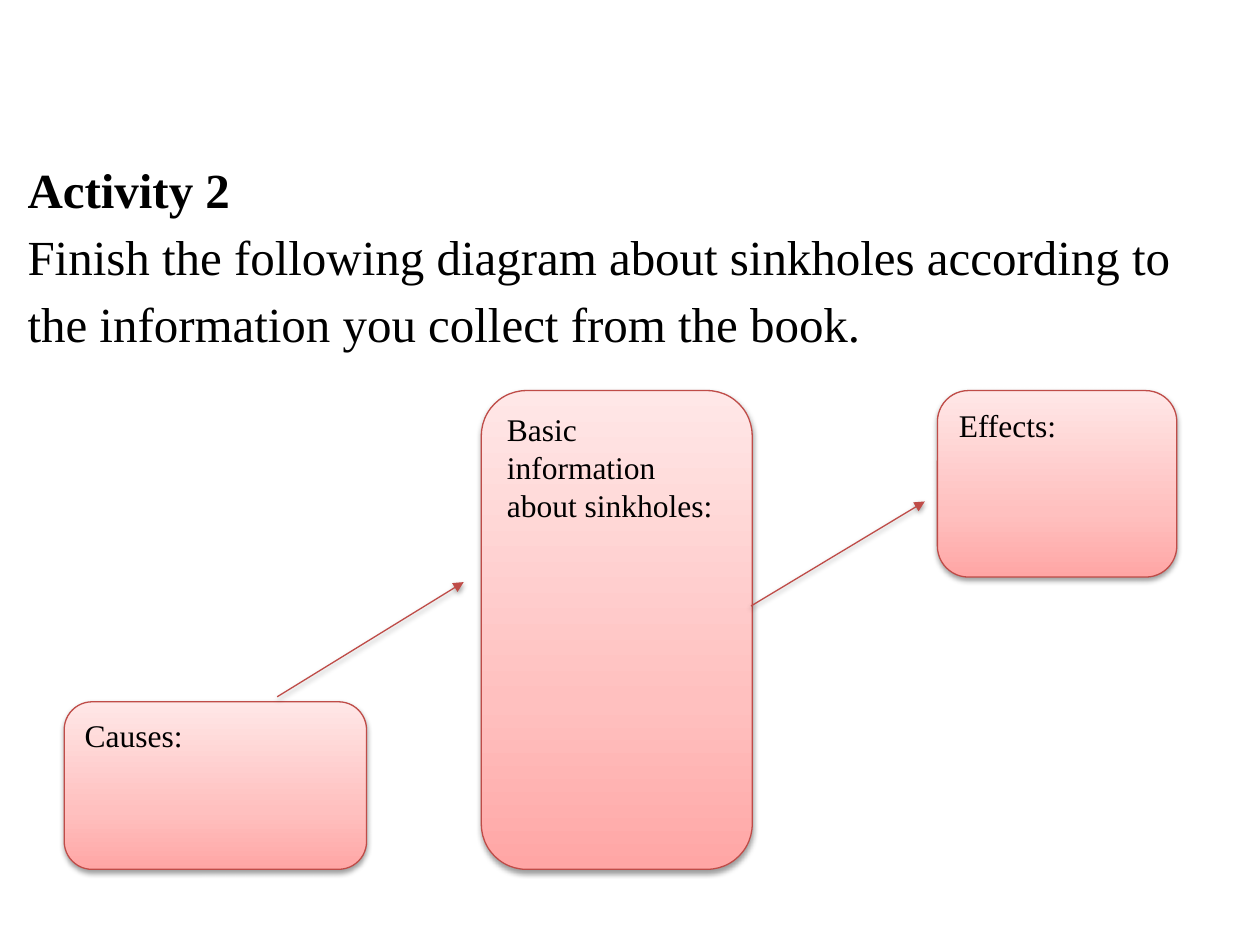
import dataclasses

import lxml.etree
import pptx
import pptx.dml.color
import pptx.enum.shapes
import pptx.enum.text
import pptx.oxml
import pptx.oxml.ns
import pptx.util

Inches = pptx.util.Inches
Pt = pptx.util.Pt
qn = pptx.oxml.ns.qn

FONT = "Times New Roman"
BLACK = "000000"
EDGE = "BF4C48"
STOPS = [(0, "FFA6A5"), (0.35, "FFC0BF"), (1, "FFE7E7")]
TOP, BASE = 3.1, 6.9

SHADOW = (
    f'<a:effectLst {pptx.oxml.ns.nsdecls("a")}>'
    '<a:outerShdw blurRad="39370" dist="20320" dir="5400000" rotWithShape="0">'
    '<a:srgbClr val="000000"><a:alpha val="38000"/></a:srgbClr>'
    "</a:outerShdw></a:effectLst>"
)


@dataclasses.dataclass
class Box:
    text: str
    left: float
    top: float
    width: float
    height: float


@dataclasses.dataclass
class Arrow:
    start: tuple[float, float]
    end: tuple[float, float]


BOXES = [
    Box("Basic information about sinkholes:", 3.82, TOP, 2.15, BASE - TOP),
    Box("Causes:", 0.51, 5.57, 2.4, BASE - 5.57),
    Box("Effects:", 7.44, TOP, 1.9, 1.48),
]
ARROWS = [
    Arrow((5.96, 4.81), (7.34, 3.98)),
    Arrow((2.2, 5.53), (3.68, 4.62)),
]


def color(code: str) -> pptx.dml.color.RGBColor:
    return pptx.dml.color.RGBColor.from_string(code)


def style(para, size: int, bold: bool = False) -> None:
    para.alignment = pptx.enum.text.PP_ALIGN.LEFT
    para.font.name = FONT
    para.font.size = Pt(size)
    para.font.bold = bold
    para.font.color.rgb = color(BLACK)


def outline(item) -> None:
    """Give a box or an arrow its red line and soft shadow."""
    item.line.color.rgb = color(EDGE)
    item.line.width = Pt(0.75)
    item._element.spPr.append(pptx.oxml.parse_xml(SHADOW))


def shade(shape) -> None:
    fill = shape.fill
    fill.gradient()
    fill.gradient_angle = 90
    # The default gradient has two stops; this one needs a third
    stops = shape._element.spPr.find(".//" + qn("a:gsLst"))
    extra = lxml.etree.SubElement(stops, qn("a:gs"), pos="0")
    lxml.etree.SubElement(extra, qn("a:srgbClr"), val=BLACK)
    for stop, (place, code) in zip(fill.gradient_stops, STOPS):
        stop.position = place
        stop.color.rgb = color(code)


def draw_box(slide, box: Box) -> None:
    shape = slide.shapes.add_shape(
        pptx.enum.shapes.MSO_SHAPE.ROUNDED_RECTANGLE,
        Inches(box.left), Inches(box.top), Inches(box.width), Inches(box.height),
    )
    shade(shape)
    outline(shape)
    frame = shape.text_frame
    frame.word_wrap = True
    frame.vertical_anchor = pptx.enum.text.MSO_ANCHOR.TOP
    frame.text = box.text
    style(frame.paragraphs[0], 18)


def draw_arrow(slide, arrow: Arrow) -> None:
    line = slide.shapes.add_connector(
        pptx.enum.shapes.MSO_CONNECTOR.STRAIGHT,
        *(Inches(value) for value in arrow.start + arrow.end),
    )
    outline(line)
    edge = line._element.spPr.find(qn("a:ln"))
    lxml.etree.SubElement(edge, qn("a:tailEnd"), type="triangle")


def draw_task(slide) -> None:
    area = slide.shapes.add_textbox(
        Inches(0.12), Inches(1.15), Inches(9.45), Inches(1.67)
    )
    frame = area.text_frame
    frame.word_wrap = True
    frame.text = (
        "Activity 2\nFinish the following diagram about sinkholes "
        "according to the information you collect from the book."
    )
    for index, para in enumerate(frame.paragraphs):
        style(para, 28, bold=index == 0)
        para.line_spacing = 1.14


def main() -> None:
    deck = pptx.Presentation()
    deck.slide_width, deck.slide_height = Inches(10), Inches(7.5)
    slide = deck.slides.add_slide(deck.slide_layouts[6])

    # Task text
    draw_task(slide)

    # Diagram
    for box in BOXES:
        draw_box(slide, box)
    for arrow in ARROWS:
        draw_arrow(slide, arrow)

    deck.save("out.pptx")


if __name__ == "__main__":
    main()
